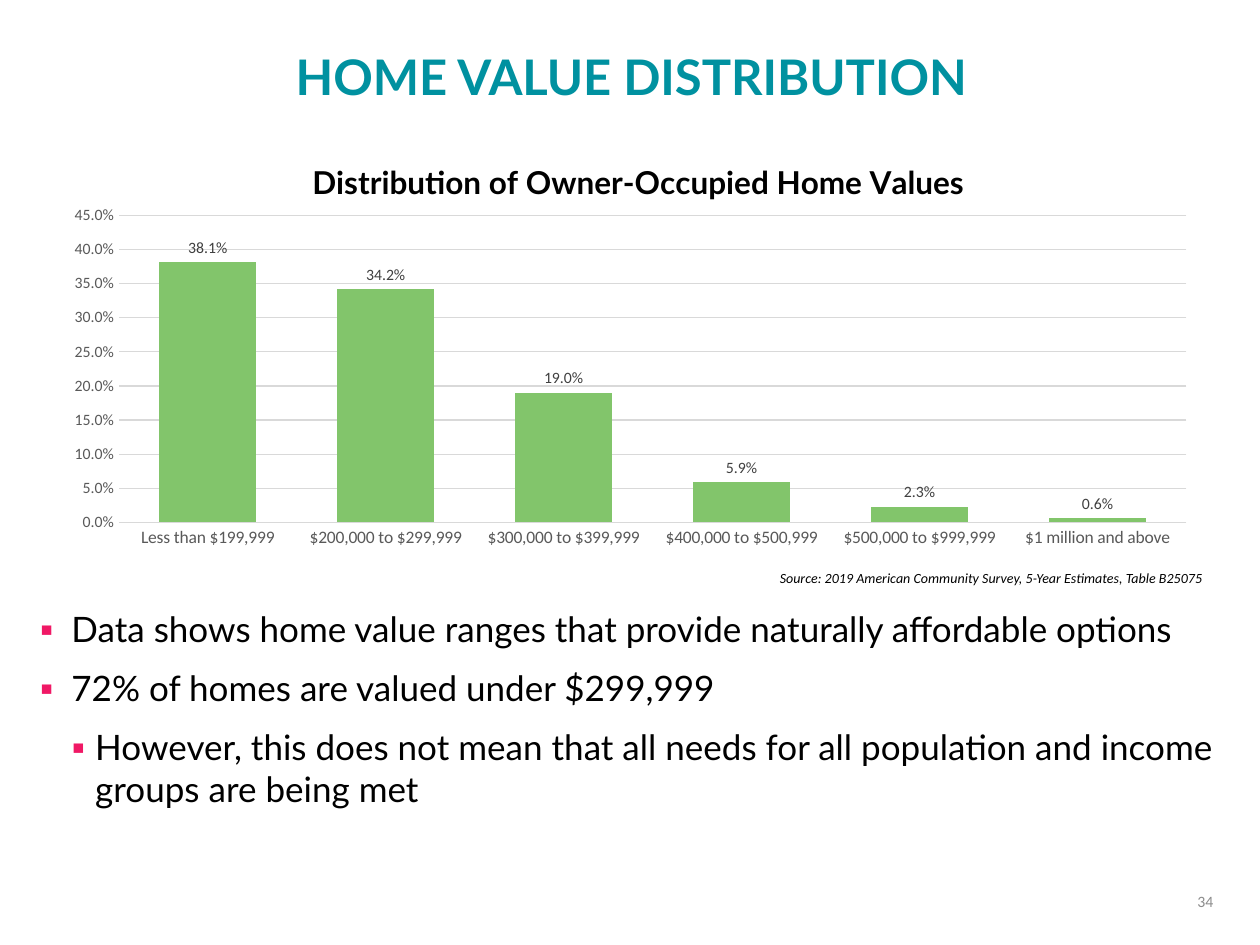
"""Build the home value distribution slide."""
from lxml import etree
from pptx import Presentation
from pptx.chart.data import CategoryChartData
from pptx.dml.color import RGBColor
from pptx.enum.chart import XL_CHART_TYPE, XL_LABEL_POSITION, XL_TICK_MARK
from pptx.enum.text import MSO_ANCHOR, PP_ALIGN
from pptx.oxml.ns import qn
from pptx.util import Cm, Pt

COLUMNS = XL_CHART_TYPE.COLUMN_CLUSTERED
OUTSIDE_END = XL_LABEL_POSITION.OUTSIDE_END
NO_TICK = XL_TICK_MARK.NONE
TOP, MIDDLE = MSO_ANCHOR.TOP, MSO_ANCHOR.MIDDLE
LEFT, CENTER, RIGHT = PP_ALIGN.LEFT, PP_ALIGN.CENTER, PP_ALIGN.RIGHT

BLACK = RGBColor(0x00, 0x00, 0x00)
TEAL = RGBColor(0x00, 0x91, 0xA0)
PINK = RGBColor(0xF0, 0x18, 0x65)
GREEN = RGBColor(0x82, 0xC5, 0x6B)
DARK_GRAY = RGBColor(0x40, 0x40, 0x40)
AXIS_GRAY = RGBColor(0x59, 0x59, 0x59)
NUMBER_GRAY = RGBColor(0x8C, 0x8C, 0x8C)
GRID_GRAY = RGBColor(0xD9, 0xD9, 0xD9)

HEADING_FONT, SMALL_FONT = "Lato", "Calibri"
PERCENT = "0.0%"

HOME_VALUES = {
    "Less than $199,999": 0.381,
    "$200,000 to $299,999": 0.342,
    "$300,000 to $399,999": 0.19,
    "$400,000 to $500,999": 0.059,
    "$500,000 to $999,999": 0.023,
    "$1 million and above": 0.006,
}
FINDINGS = [
    ("Data shows home value ranges that provide naturally affordable options", 1),
    ("72% of homes are valued under $299,999", 1),
    ("However, this does not mean that all needs for all population and income "
     "groups are being met", 2),
]
INDENTS = {1: (Cm(1.9), Cm(-0.64)), 2: (Cm(2.38), Cm(-0.48))}


def style_font(font, size, color, name=SMALL_FONT, bold=False, italic=False):
    """Apply a complete font format."""
    font.size, font.name, font.bold, font.italic = Pt(size), name, bold, italic
    font.color.rgb = color


def write_text(paragraph, text, align=LEFT, line_spacing=None, **font_format):
    """Write one formatted run into a paragraph."""
    paragraph.alignment = align
    paragraph.line_spacing = line_spacing
    run = paragraph.add_run()
    run.text = text
    style_font(run.font, **font_format)


def add_bullet(paragraph, level):
    """Give a paragraph a hanging square bullet."""
    margin, indent = INDENTS[level]
    properties = paragraph._p.get_or_add_pPr()
    properties.set("marL", str(margin))
    properties.set("indent", str(indent))
    color = etree.SubElement(properties, qn("a:buClr"))
    etree.SubElement(color, qn("a:srgbClr"), val=str(PINK))
    etree.SubElement(properties, qn("a:buFont"), typeface=HEADING_FONT)
    etree.SubElement(properties, qn("a:buChar"), char="▪")


def place_chart_part(part, index, **layout_values):
    """Set a manual layout, in fractions of the chart, on a chart part."""
    for old_layout in part.findall(qn("c:layout")):
        part.remove(old_layout)
    layout = etree.Element(qn("c:layout"))
    manual = etree.SubElement(layout, qn("c:manualLayout"))
    for name, value in layout_values.items():
        etree.SubElement(manual, qn(f"c:{name}"), val=str(value))
    part.insert(index, layout)


class SlideBuilder:
    """Hold the current slide and add styled elements to it."""

    def __init__(self, slide):
        self.slide = slide

    def add_frame(self, left, top, width, height, anchor=TOP):
        """Add a wrapping text box and return its text frame."""
        shape = self.slide.shapes.add_textbox(Cm(left), Cm(top), Cm(width), Cm(height))
        frame = shape.text_frame
        frame.word_wrap = True
        frame.vertical_anchor = anchor
        return frame

    def add_label(self, text, bounds, anchor=TOP, **text_format):
        """Add a text box with a single paragraph."""
        frame = self.add_frame(*bounds, anchor=anchor)
        write_text(frame.paragraphs[0], text, **text_format)

    def add_bullets(self, items, bounds):
        """Add a bulleted list of (text, level) items."""
        frame = self.add_frame(*bounds)
        for number, (text, level) in enumerate(items):
            paragraph = frame.add_paragraph() if number else frame.paragraphs[0]
            paragraph.level = level
            add_bullet(paragraph, level)
            paragraph.space_before = Pt(3.8 if number else 0)
            paragraph.space_after = Pt(6)
            write_text(paragraph, text, size=20, color=BLACK, name=HEADING_FONT)

    def add_column_chart(self, title, values, bounds):
        """Add a titled column chart with percent labels."""
        data = CategoryChartData(number_format=PERCENT)
        data.categories = list(values)
        data.add_series("Series 1", list(values.values()))
        chart = self.slide.shapes.add_chart(COLUMNS, *map(Cm, bounds), data).chart
        style_font(chart.font, 10, BLACK)
        chart.has_legend = False
        chart.has_title = True
        write_text(chart.chart_title.text_frame.paragraphs[0], title, align=CENTER,
                   size=18, color=BLACK, name=HEADING_FONT, bold=True)
        place_chart_part(chart.chart_title.element, 1,
                         xMode="edge", yMode="edge", x=0.22, y=0.05)
        place_chart_part(chart.element.find(".//" + qn("c:plotArea")), 0,
                         layoutTarget="inner", xMode="edge", yMode="edge",
                         x=0.058, y=0.196, w=0.921, h=0.726)
        self.style_columns(chart.plots[0])
        self.style_axes(chart.category_axis, chart.value_axis)

    def style_columns(self, plot):
        """Format the columns and their data labels."""
        plot.gap_width, plot.overlap = 83, -27
        plot.vary_by_categories = False
        fill = plot.series[0].format.fill
        fill.solid()
        fill.fore_color.rgb = GREEN
        plot.has_data_labels = True
        labels = plot.data_labels
        labels.show_value = True
        labels.position = OUTSIDE_END
        labels.number_format, labels.number_format_is_linked = PERCENT, False
        style_font(labels.font, 9, DARK_GRAY)

    def style_axes(self, category_axis, value_axis):
        """Format both axes and the gridlines."""
        for axis, size in ((category_axis, 10), (value_axis, 9)):
            axis.major_tick_mark = axis.minor_tick_mark = NO_TICK
            style_font(axis.tick_labels.font, size, AXIS_GRAY)
        value_axis.minimum_scale, value_axis.maximum_scale = 0, 0.45
        value_axis.major_unit = 0.05
        value_axis.tick_labels.number_format = PERCENT
        value_axis.tick_labels.number_format_is_linked = False
        value_axis.format.line.fill.background()
        value_axis.has_major_gridlines = True
        for line in (category_axis.format.line, value_axis.major_gridlines.format.line):
            line.color.rgb = GRID_GRAY
            line.width = Pt(0.75)


def main():
    """Create and save the presentation."""
    presentation = Presentation()
    presentation.slide_width, presentation.slide_height = Cm(25.4), Cm(19.05)
    builder = SlideBuilder(presentation.slides.add_slide(presentation.slide_layouts[6]))
    builder.add_bullets(FINDINGS, (-0.71, 12.12, 25.43, 4.65))
    builder.add_label("HOME VALUE DISTRIBUTION", (1.75, 0.43, 21.95, 2.34), MIDDLE,
                      align=CENTER, line_spacing=0.9, size=28, color=TEAL,
                      name=HEADING_FONT, bold=True)
    builder.add_label("34", (19.05, 17.65, 5.66, 1.02), MIDDLE,
                      align=RIGHT, size=9, color=NUMBER_GRAY)
    builder.add_label(
        "Source: 2019 American Community Survey, 5-Year Estimates, Table B25075",
        (15.47, 11.35, 9.25, 0.74), size=8, color=BLACK, italic=True)
    builder.add_column_chart("Distribution of Owner-Occupied Home Values", HOME_VALUES,
                             (1.04, 2.67, 23.37, 8.53))
    presentation.save("out.pptx")


if __name__ == "__main__":
    main()
